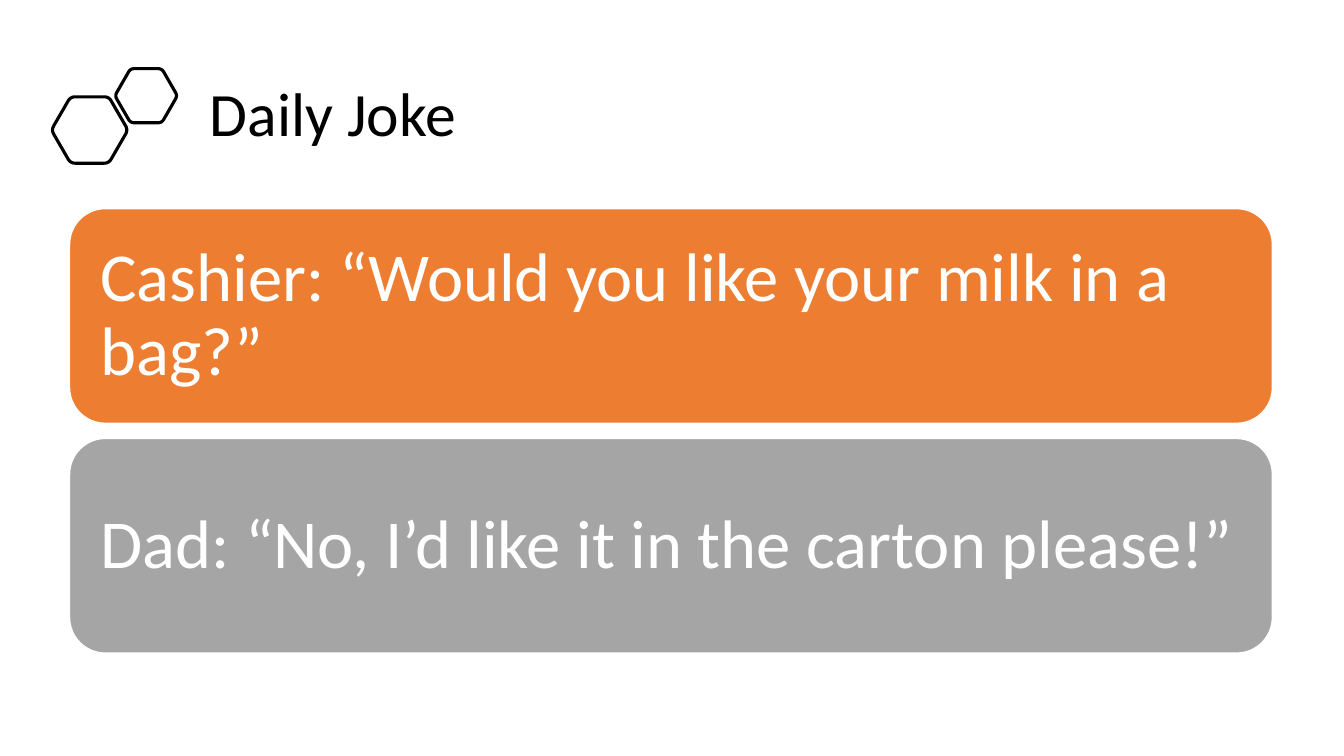
import math
from dataclasses import dataclass

from pptx import Presentation
from pptx import util as u
from pptx.dml.color import RGBColor
from pptx.enum import shapes, text


@dataclass(frozen=True)
class Theme:
    font: str = "Calibri"
    title_size: int = 44
    joke_size: int = 49
    ink: RGBColor = RGBColor(0x00, 0x00, 0x00)
    paper: RGBColor = RGBColor(0xFF, 0xFF, 0xFF)
    orange: RGBColor = RGBColor(0xED, 0x7D, 0x31)
    grey: RGBColor = RGBColor(0xA5, 0xA5, 0xA5)


THEME = Theme()


def set_text(frame, words, size, color):
    """Fill a frame with one left-aligned, vertically centred paragraph."""
    frame.text = words
    frame.word_wrap = True
    frame.auto_size = text.MSO_AUTO_SIZE.NONE
    frame.vertical_anchor = text.MSO_ANCHOR.MIDDLE
    paragraph = frame.paragraphs[0]
    paragraph.alignment = text.PP_ALIGN.LEFT
    paragraph.line_spacing = 0.9
    paragraph.font.name = THEME.font
    paragraph.font.size = u.Pt(size)
    paragraph.font.color.rgb = color


def place_title(slide, words):
    title = slide.shapes.title
    title.left, title.top = u.Inches(1.98), u.Inches(0.57)
    title.width, title.height = u.Inches(10.81), u.Inches(1.17)
    set_text(title.text_frame, words, THEME.title_size, THEME.ink)


def rounded_hexagon_points(center_x, center_y, radius, rounding=0.12, steps=6):
    """Return outline points in EMU, each corner eased by a quadratic curve."""
    corners = [
        (center_x + radius * math.cos(k * math.pi / 3),
         center_y + radius * math.sin(k * math.pi / 3))
        for k in range(6)
    ]
    points = []
    for k, corner in enumerate(corners):
        before, after = corners[k - 1], corners[(k + 1) % 6]
        for step in range(steps + 1):
            t = step / steps
            pull_before = rounding * (1 - t) ** 2
            pull_after = rounding * t ** 2
            points.append(tuple(
                u.Inches(c + pull_before * (b - c) + pull_after * (a - c))
                for b, c, a in zip(before, corner, after)
            ))
    return points


def add_hexagon(slide, center_x, center_y, radius):
    start, *rest = rounded_hexagon_points(center_x, center_y, radius)
    builder = slide.shapes.build_freeform(*start)
    builder.add_line_segments(rest, close=True)
    hexagon = builder.convert_to_shape()
    hexagon.shadow.inherit = False
    hexagon.fill.background()
    hexagon.line.color.rgb = THEME.ink
    hexagon.line.width = u.Pt(2.25)


def add_joke_panel(slide, top, words, color):
    panel = slide.shapes.add_shape(
        shapes.MSO_SHAPE.ROUNDED_RECTANGLE,
        u.Inches(0.69), u.Inches(top), u.Inches(11.93), u.Inches(2.13))
    panel.shadow.inherit = False
    panel.fill.solid()
    panel.fill.fore_color.rgb = color
    panel.line.color.rgb = THEME.paper
    panel.line.width = u.Pt(1)
    frame = panel.text_frame
    frame.margin_left = frame.margin_right = u.Inches(0.2)
    frame.margin_top = frame.margin_bottom = u.Inches(0.2)
    set_text(frame, words, THEME.joke_size, THEME.paper)


def main():
    presentation = Presentation()
    presentation.slide_width = u.Inches(13.33)
    presentation.slide_height = u.Inches(7.5)
    slide = presentation.slides.add_slide(presentation.slide_layouts[5])

    place_title(slide, "Daily Joke")
    add_hexagon(slide, 0.89, 1.29, 0.38)
    add_hexagon(slide, 1.45, 0.95, 0.31)

    joke = [
        ("Cashier: “Would you like your milk in a bag?”", THEME.orange),
        ("Dad: “No, I’d like it in the carton please!”", THEME.grey),
    ]
    for row, (words, color) in enumerate(joke):
        add_joke_panel(slide, 2.07 + 2.28 * row, words, color)

    presentation.save("out.pptx")


if __name__ == "__main__":
    main()
